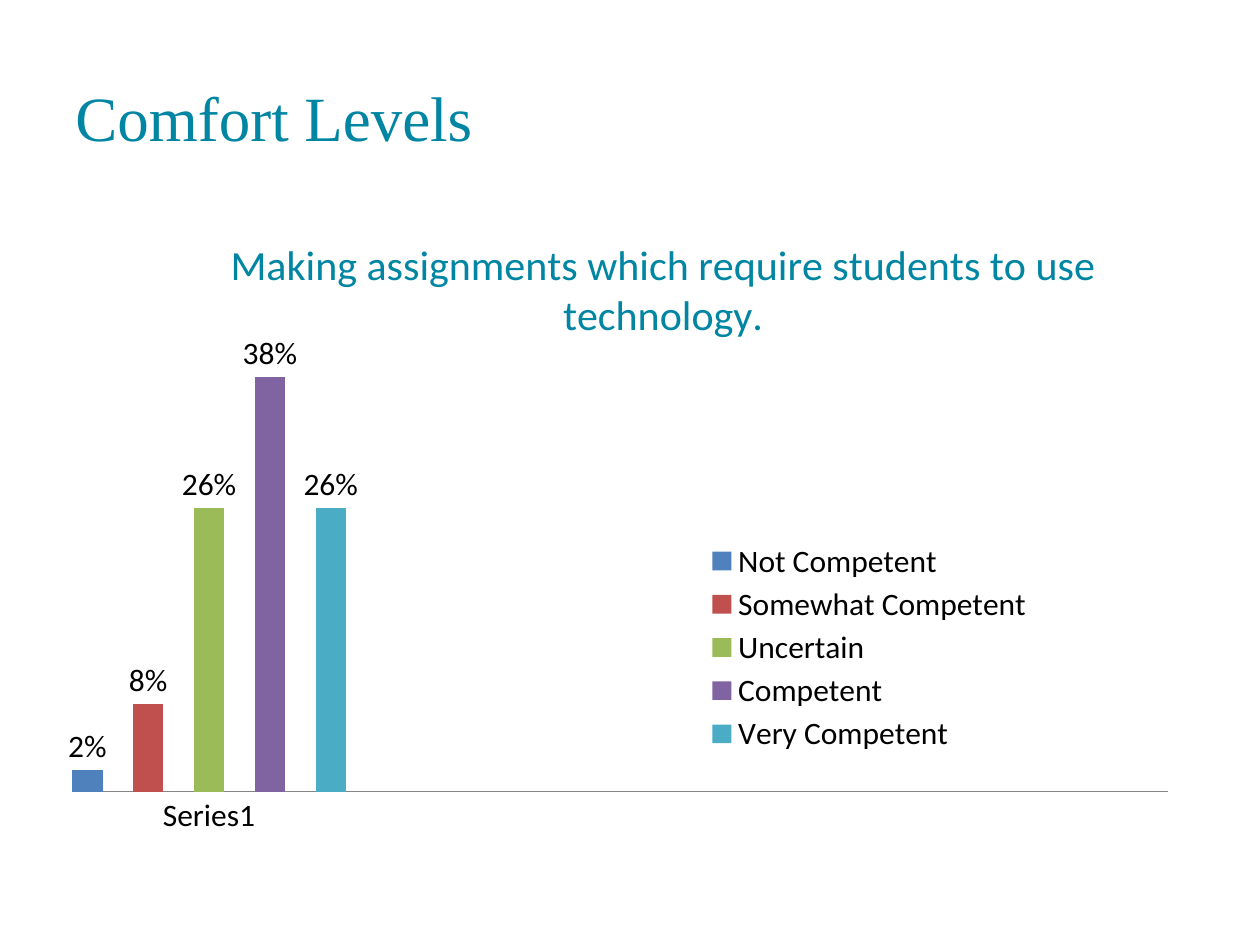
from lxml import etree
from pptx import Presentation
from pptx.chart.data import CategoryChartData
from pptx.dml.color import RGBColor
from pptx.enum import chart as kinds, text
from pptx.oxml.ns import qn
from pptx.util import Inches, Pt

# Content
TITLE = "Comfort Levels"
HEAD = "Making assignments which require students to use technology."
CATS = ["Series1", "", "", ""]
LEVELS = [
    ("Not Competent", 0.02, "blue"),
    ("Somewhat Competent", 0.08, "red"),
    ("Uncertain", 0.26, "green"),
    ("Competent", 0.38, "purple"),
    ("Very Competent", 0.26, "aqua"),
]
COLORS = {
    "teal": "0085A2", "black": "000000", "gray": "868686",
    "blue": "4F81BD", "red": "C0504D", "green": "9BBB59",
    "purple": "8064A2", "aqua": "4BACC6",
}


def color(name):
    return RGBColor.from_string(COLORS[name])


def style(font, size, name, face="Calibri"):
    font.name, font.size, font.bold = face, Pt(size), False
    font.color.rgb = color(name)


def place(part, inner=False, **spots):
    """Give a chart part a manual layout, in shares of the chart."""
    layout = part.find(qn("c:layout"))
    if layout is None:
        layout = etree.Element(qn("c:layout"))
        before = [e for e in part if e.tag in (qn("c:tx"), qn("c:legendPos"))]
        part.insert(part.index(before[-1]) + 1 if before else 0, layout)
    for old in list(layout):
        layout.remove(old)
    manual = etree.SubElement(layout, qn("c:manualLayout"))
    if inner:
        etree.SubElement(manual, qn("c:layoutTarget")).set("val", "inner")
    for key in ("xMode", "yMode"):
        etree.SubElement(manual, qn("c:" + key)).set("val", "edge")
    for key, share in spots.items():
        etree.SubElement(manual, qn("c:" + key)).set("val", str(share))


deck = Presentation()
deck.slide_width, deck.slide_height = Inches(10), Inches(7.5)
slide = deck.slides.add_slide(deck.slide_layouts[6])

# Slide title
box = slide.shapes.add_textbox(Inches(0.5), Inches(0.3), Inches(8.21), Inches(1.25))
frame = box.text_frame
frame.word_wrap = True
frame.vertical_anchor = text.MSO_ANCHOR.MIDDLE
frame.text = TITLE
style(frame.paragraphs[0].runs[0].font, 36, "teal", "Times New Roman")

# Chart data
data = CategoryChartData(number_format="0%")
data.categories = CATS
for name, share, _ in LEVELS:
    data.add_series(name, [share] + [None] * (len(CATS) - 1))
chart = slide.shapes.add_chart(
    kinds.XL_CHART_TYPE.COLUMN_CLUSTERED,
    Inches(0.42), Inches(1.67), Inches(9), Inches(4.95), data).chart
style(chart.font, 18, "black")

# Chart title
chart.has_title = True
head = chart.chart_title
head.text_frame.text = HEAD
style(head.text_frame.paragraphs[0].runs[0].font, 24, "teal")
head.include_in_layout = False
place(head._element, x=0.15, y=0.03)

# Axes
base, scale = chart.category_axis, chart.value_axis
base.major_tick_mark = kinds.XL_TICK_MARK.NONE
base.format.line.color.rgb = color("gray")
scale.has_major_gridlines = False
scale.minimum_scale, scale.maximum_scale = 0, 0.4
scale.visible = False

# Columns and their labels
plot = chart.plots[0]
plot.gap_width, plot.overlap, plot.vary_by_categories = 0, -100, False
for series, (_, _, name) in zip(plot.series, LEVELS):
    series.format.fill.solid()
    series.format.fill.fore_color.rgb = color(name)
    labels = series.data_labels
    labels.show_value = True
    labels.number_format, labels.number_format_is_linked = "0%", False
    labels.position = kinds.XL_LABEL_POSITION.OUTSIDE_END
    style(labels.font, 18, "black")
place(chart._chartSpace.chart.plotArea, inner=True, x=0.017, y=0.235, w=0.966, h=0.709)

# Legend
chart.has_legend = True
legend = chart.legend
legend.position = kinds.XL_LEGEND_POSITION.BOTTOM
legend.include_in_layout = False
style(legend.font, 18, "black")
place(legend._element, x=0.57, y=0.53, w=0.3, h=0.36)

deck.save("out.pptx")
